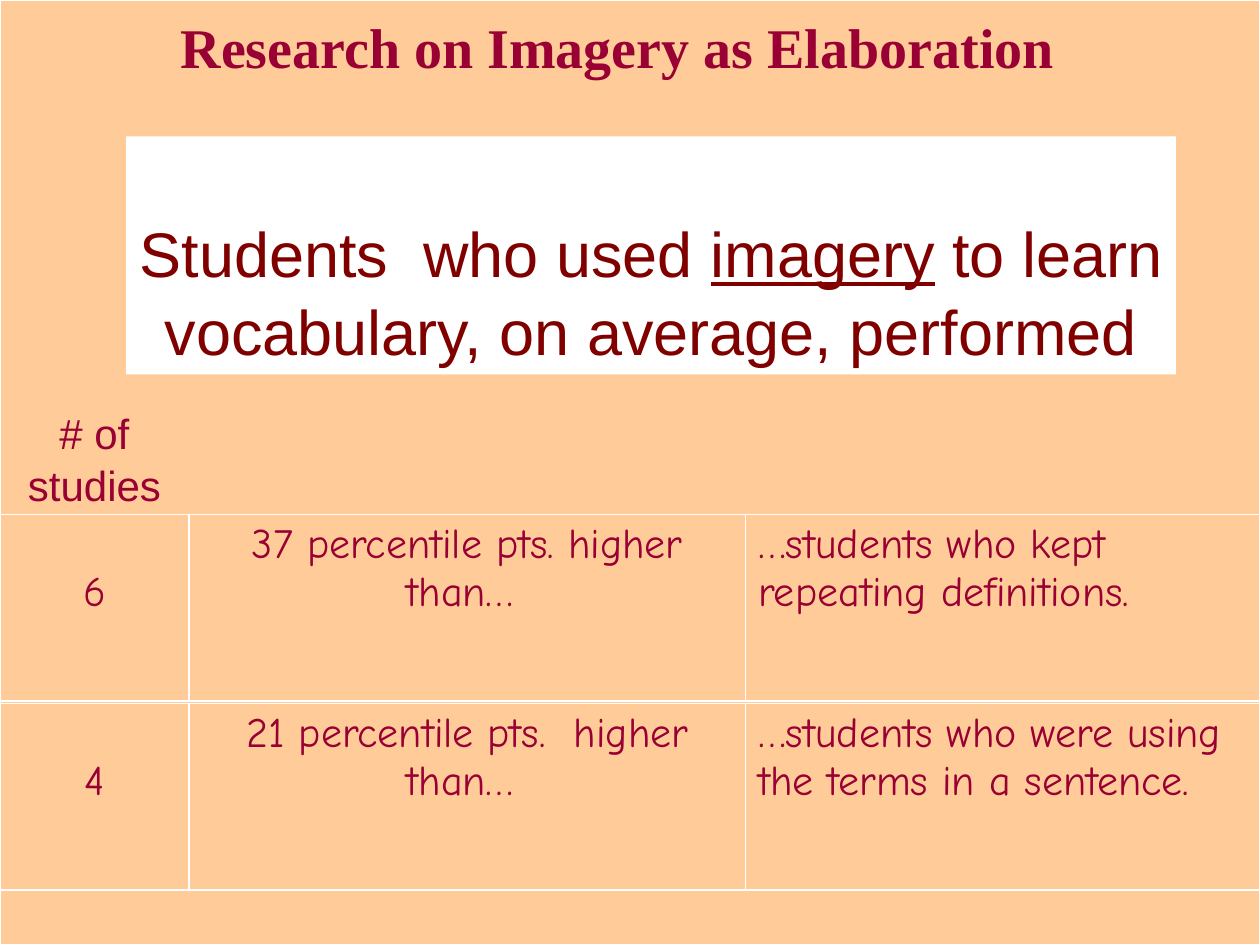
from dataclasses import dataclass

import pptx
import pptx.enum.shapes
import pptx.enum.text
import pptx.dml.color
import pptx.oxml
import pptx.oxml.ns
import pptx.util

Pt = pptx.util.Pt
ALIGN = pptx.enum.text.PP_ALIGN
ANCHOR = pptx.enum.text.MSO_ANCHOR
RECT = pptx.enum.shapes.MSO_SHAPE.RECTANGLE

COLORS = {"peach": "FFCC99", "white": "FFFFFF", "crimson": "990033", "maroon": "800000"}
COLUMN_WIDTHS = (108, 318, 294)
ROW_HEIGHT = 106.5
COUNT_TOP_MARGIN = 31  # sets the count level with the second line of its row


@dataclass
class Finding:
    top: float
    count: str
    result: str
    comparison: str


FINDINGS = [
    Finding(294, "6", "37 percentile pts. higher than… ",
            "…students who kept repeating definitions."),
    Finding(402, "4", "21 percentile pts.  higher than… ",
            "…students who were using the terms in a sentence."),
]


def rgb(name: str) -> pptx.dml.color.RGBColor:
    return pptx.dml.color.RGBColor.from_string(COLORS[name])


def format_runs(p, font: str, size: float, color: str, bold: bool = False) -> None:
    for r in p.runs:
        r.font.name = font
        r.font.size = Pt(size)
        r.font.bold = bold
        r.font.color.rgb = rgb(color)


def add_rectangle(s, left: float, top: float, width: float, height: float, fill: str):
    sp = s.shapes.add_shape(RECT, Pt(left), Pt(top), Pt(width), Pt(height))
    sp.shadow.inherit = False
    sp.fill.solid()
    sp.fill.fore_color.rgb = rgb(fill)
    sp.line.fill.background()
    return sp


def add_borders(cell) -> None:
    tc_pr = cell._tc.get_or_add_tcPr()
    for position, side in enumerate(("lnL", "lnR", "lnT", "lnB")):
        border = pptx.oxml.parse_xml(
            f'<a:{side} {pptx.oxml.ns.nsdecls("a")} w="{Pt(1)}"><a:solidFill>'
            f'<a:srgbClr val="{COLORS["white"]}"/></a:solidFill></a:{side}>')
        tc_pr.insert(position, border)


def add_finding(s, finding: Finding) -> None:
    frame = s.shapes.add_table(1, len(COLUMN_WIDTHS), Pt(0), Pt(finding.top),
                               Pt(sum(COLUMN_WIDTHS)), Pt(ROW_HEIGHT))
    table = frame.table
    table.first_row = table.horz_banding = False
    table.rows[0].height = Pt(ROW_HEIGHT)
    texts = (finding.count, finding.result, finding.comparison)
    aligns = (ALIGN.CENTER, ALIGN.CENTER, ALIGN.LEFT)
    for i, (width, text, align) in enumerate(zip(COLUMN_WIDTHS, texts, aligns)):
        table.columns[i].width = Pt(width)
        cell = table.cell(0, i)
        cell.fill.background()
        add_borders(cell)
        cell.text_frame.text = text
        p = cell.text_frame.paragraphs[0]
        p.alignment = align
        format_runs(p, "Comic Neue", 24, "crimson")
    table.cell(0, 0).margin_top = Pt(COUNT_TOP_MARGIN)


def main() -> None:
    prs = pptx.Presentation()
    prs.slide_width, prs.slide_height = Pt(720), Pt(540)
    s = prs.slides.add_slide(prs.slide_layouts[5])

    # Backdrop, sent behind the title
    backdrop = add_rectangle(s, 0, 0, 720, 540, "peach")
    backdrop.line.color.rgb = rgb("white")
    backdrop.line.width = Pt(0.75)
    s.shapes._spTree.insert(2, backdrop._element)

    # Title
    title = s.shapes.title
    title.left, title.top, title.width, title.height = Pt(96), Pt(0), Pt(528), Pt(45)
    tf = title.text_frame
    tf.text = "Research on Imagery as Elaboration"
    tf.vertical_anchor = ANCHOR.TOP
    tf.margin_top = Pt(7)
    tf.auto_size = pptx.enum.text.MSO_AUTO_SIZE.NONE
    p = tf.paragraphs[0]
    p.alignment = ALIGN.LEFT
    format_runs(p, "Times New Roman", 32, "crimson", bold=True)

    # Findings
    for finding in FINDINGS:
        add_finding(s, finding)

    # Statement
    statement = add_rectangle(s, 72, 78, 600, 136, "white")
    tf = statement.text_frame
    tf.word_wrap = True
    tf.vertical_anchor = ANCHOR.BOTTOM
    p = tf.paragraphs[0]
    p.alignment = ALIGN.CENTER
    p.line_spacing = 1.04
    for text in ("Students  who used ", "imagery", " to learn vocabulary, on average, performed"):
        r = p.add_run()
        r.text = text
        r.font.underline = text == "imagery"
    format_runs(p, "Arial", 36, "maroon")

    # Heading of the count column
    heading = s.shapes.add_textbox(Pt(0), Pt(228), Pt(COLUMN_WIDTHS[0]), Pt(65))
    tf = heading.text_frame
    tf.word_wrap = True
    tf.text = "# of studies"
    p = tf.paragraphs[0]
    p.alignment = ALIGN.CENTER
    p.line_spacing = 1.04
    format_runs(p, "Arial", 24, "crimson")

    prs.save("out.pptx")


if __name__ == "__main__":
    main()
